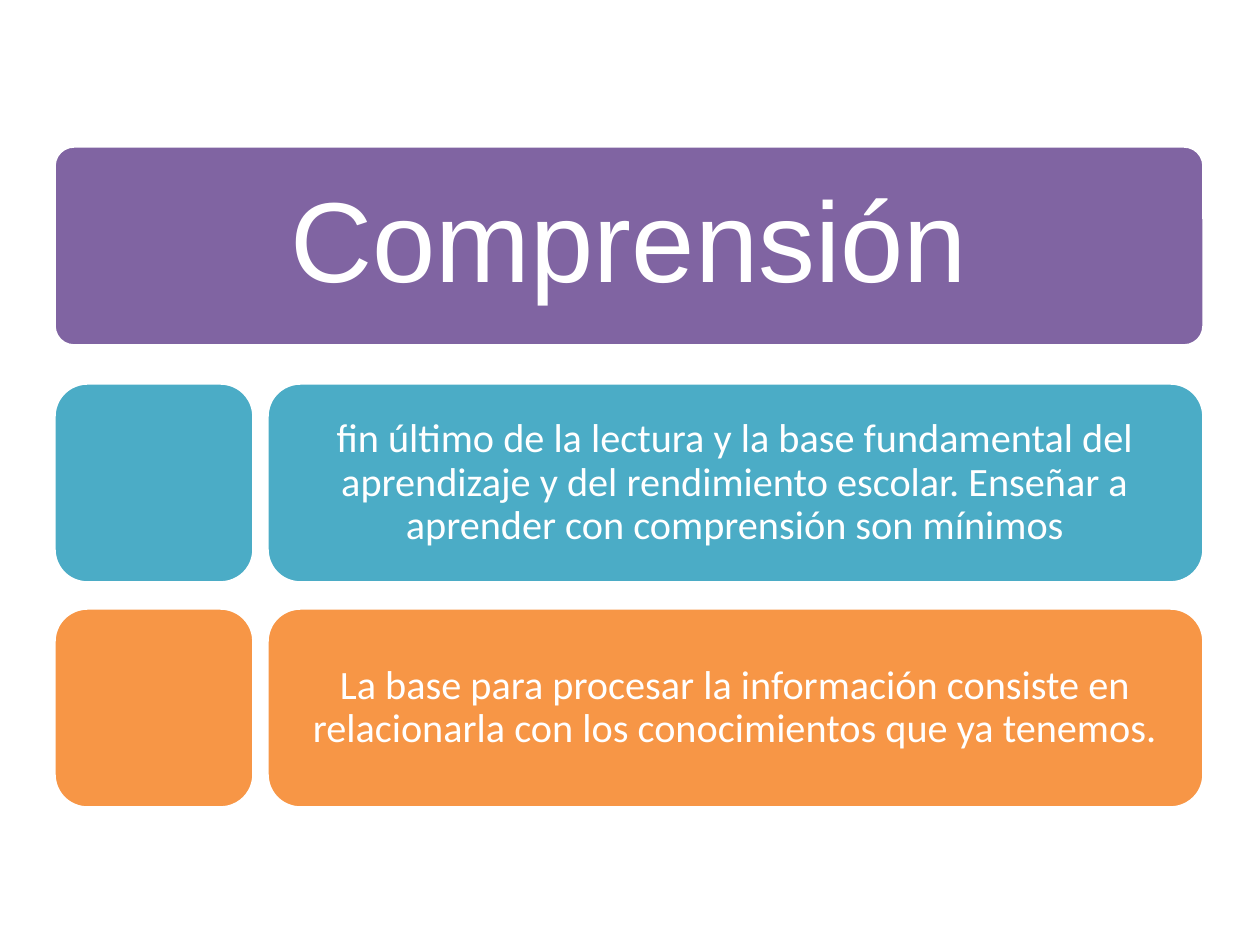
from pptx import Presentation
from pptx.dml.color import RGBColor
from pptx.enum.shapes import MSO_SHAPE
from pptx.enum.text import MSO_ANCHOR, MSO_AUTO_SIZE, PP_ALIGN
from pptx.util import Pt

ROUND = MSO_SHAPE.ROUNDED_RECTANGLE
MIDDLE = MSO_ANCHOR.MIDDLE
FIXED = MSO_AUTO_SIZE.NONE
CENTER = PP_ALIGN.CENTER
TITLE_ONLY = 5
WHITE = "FFFFFF"


def px(size):
    return round(size * 914400 / 126)


def color(code):
    return RGBColor.from_string(code)


class Board:
    def __init__(self, deck):
        self.slide = deck.slides.add_slide(deck.slide_layouts[TITLE_ONLY])
        self.shapes = self.slide.shapes

    def label(self, shape, text, font, size, side, edge):
        frame = shape.text_frame
        frame.text = text
        frame.word_wrap = True
        frame.auto_size = FIXED
        frame.vertical_anchor = MIDDLE
        frame.margin_left = frame.margin_right = px(side)
        frame.margin_top = frame.margin_bottom = px(edge)
        line = frame.paragraphs[0]
        line.alignment = CENTER
        line.line_spacing = 0.9
        line.font.name = font
        line.font.size = Pt(size)
        line.font.color.rgb = color(WHITE)

    def card(self, box, fill, curve=0.167):
        shape = self.shapes.add_shape(ROUND, *map(px, box))
        shape.adjustments[0] = curve
        shape.shadow.inherit = False
        shape.fill.solid()
        shape.fill.fore_color.rgb = color(fill)
        shape.line.color.rgb = color(WHITE)
        shape.line.width = Pt(2)
        return shape

    def title(self, box, text):
        shape = self.shapes.title
        shape.left, shape.top, shape.width, shape.height = map(px, box)
        self.label(shape, text, "Arial", 65, 17, 11)
        shape.element.getparent().append(shape.element)

    def row(self, top, fill, text):
        self.card((LEFT, top, HIGH, HIGH), fill)
        start = LEFT + HIGH + GAP
        body = self.card((start, top, LEFT + WIDE - start, HIGH), fill)
        self.label(body, text, "Calibri", 23, 23, 23)


LEFT, WIDE, HIGH, GAP = 54, 1150, 200, 13
HEAD, FIRST, STEP, PAD = 146, 383, 225, 6
ROWS = (
    ("4BACC6", "fin último de la lectura y la base fundamental del aprendizaje "
     "y del rendimiento escolar. Enseñar a aprender con comprensión son mínimos"),
    ("F79646", "La base para procesar la información consiste en relacionarla "
     "con los conocimientos que ya tenemos."),
)


def main():
    deck = Presentation()
    deck.slide_width, deck.slide_height = px(1260), px(945)
    board = Board(deck)
    board.card((LEFT, HEAD, WIDE, HIGH), "8064A2", 0.1)
    board.title((LEFT + PAD, HEAD + PAD, WIDE - 2 * PAD, HIGH - 2 * PAD), "Comprensión")
    for index, (fill, text) in enumerate(ROWS):
        board.row(FIRST + index * STEP, fill, text)
    deck.save("out.pptx")


if __name__ == "__main__":
    main()
